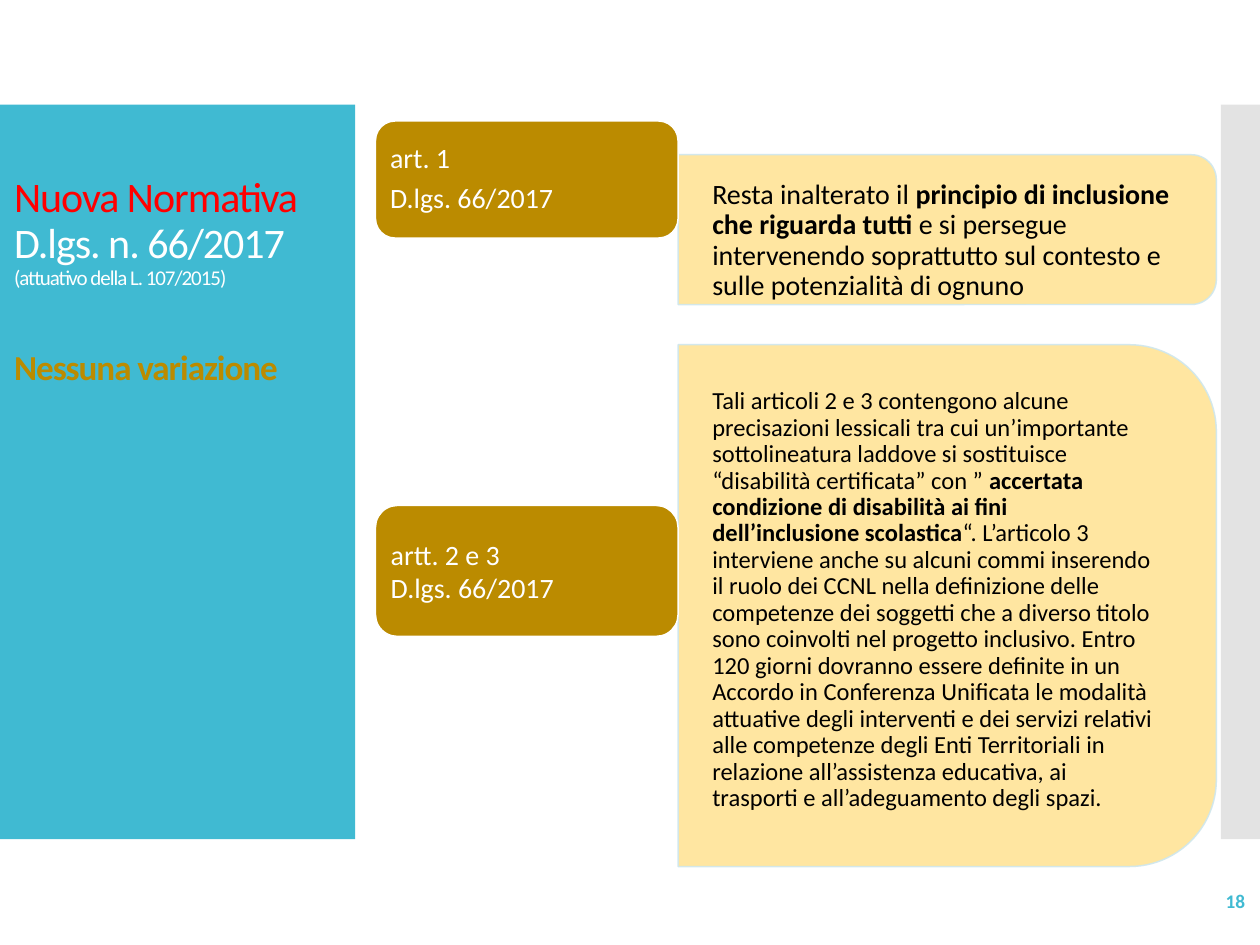
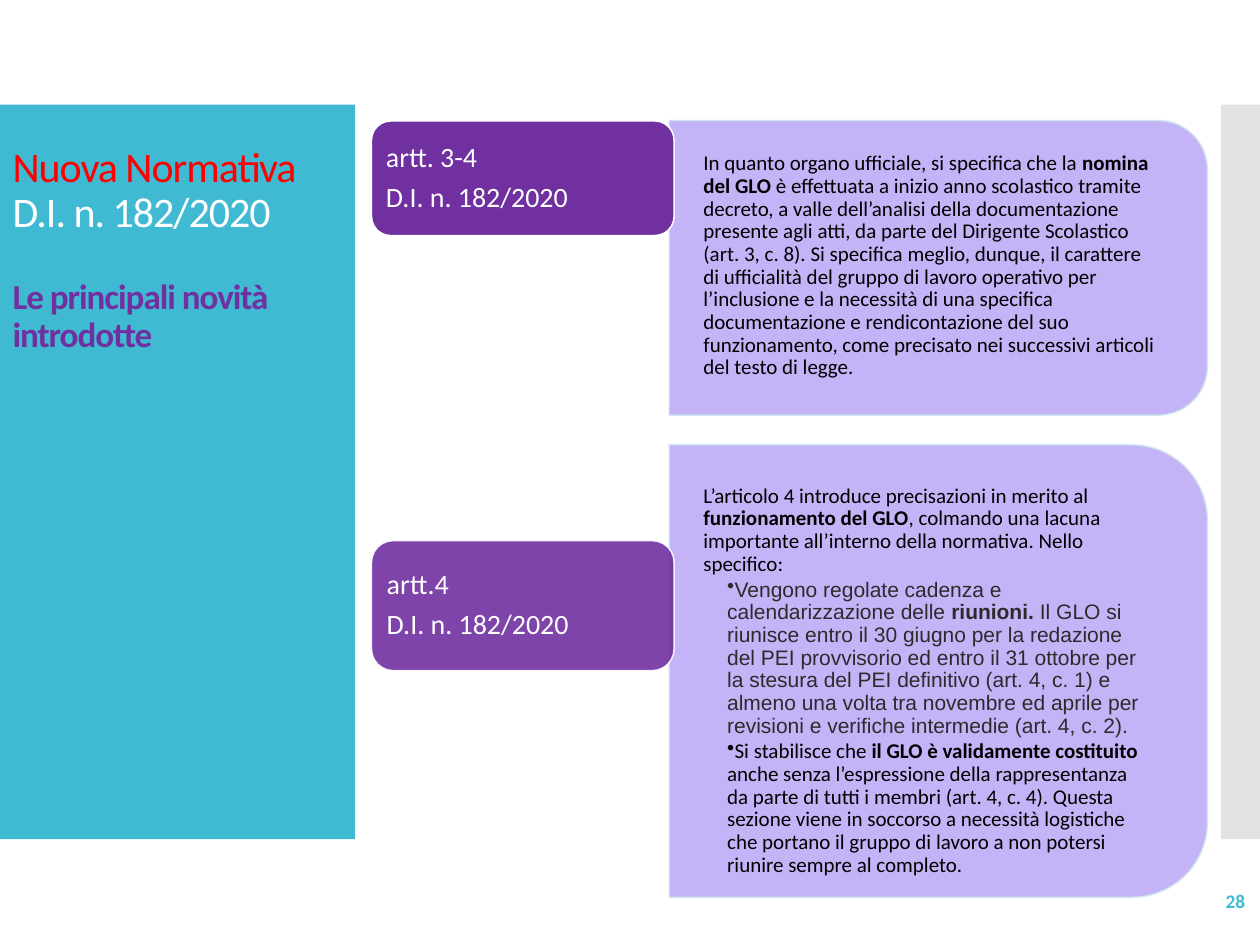
import pptx
import pptx.util
import pptx.dml.color
import pptx.enum.shapes
import pptx.enum.text
import pptx.oxml
import pptx.oxml.ns

Cm = pptx.util.Cm
Pt = pptx.util.Pt
RGB = pptx.dml.color.RGBColor
KIND = pptx.enum.shapes.MSO_SHAPE
ALIGN = pptx.enum.text.PP_ALIGN
MIDDLE = pptx.enum.text.MSO_ANCHOR.MIDDLE
qn = pptx.oxml.ns.qn

TEAL = RGB(0x40, 0xBA, 0xD2)
GREY = RGB(0xC8, 0xC8, 0xC8)
RED = RGB(0xFF, 0x00, 0x00)
WHITE = RGB(0xFF, 0xFF, 0xFF)
BLACK = RGB(0x00, 0x00, 0x00)
INK = RGB(0x2B, 0x2B, 0x2B)
GOLD = RGB(0xBB, 0x8B, 0x00)
CREAM = RGB(0xFF, 0xE4, 0x97)
PLUM = RGB(0x70, 0x30, 0xA0)
LILAC = RGB(0xBF, 0xAB, 0xF7)
ICE = RGB(0xCF, 0xE7, 0xEE)

WIDE = 10.85


def draw(slide, kind, box, fill, edge=None, alpha=100):
    shape = slide.shapes.add_shape(kind, *[Cm(n) for n in box])
    shape.shadow.inherit = False
    shape.fill.solid()
    shape.fill.fore_color.rgb = fill
    if edge is None:
        shape.line.fill.background()
    else:
        shape.line.color.rgb = edge
        shape.line.width = Pt(0.85)
    if alpha < 100:
        for color in list(shape.element.spPr.iter(qn("a:srgbClr"))):
            fade = pptx.oxml.parse_xml(
                f'<a:alpha {pptx.oxml.ns.nsdecls("a")} val="{alpha * 1000}"/>')
            color.append(fade)
    return shape


def write(para, text, size, color, face="Calibri", bold=False):
    for i, part in enumerate(text.split("*")):
        run = para.add_run()
        run.text = part
        run.font.name = face
        run.font.size = Pt(size)
        run.font.color.rgb = color
        run.font.bold = bold or i % 2 == 1


pages = [
    {
        "num": "18", "dark": GOLD, "pale": CREAM, "left": 7.57, "right": 13.67,
        "title": (0.03, 2.44, 6.86, 6.5), "foot": 0.13,
        "lines": [
            (0, [("Nuova Normativa", 24, RED, False)]),
            (0, [("D.lgs. n. 66/2017 ", 24, WHITE, False),
                 ("(attuativo della L. 107/2015)", 12, WHITE, False)]),
            (34.5, [("Nessuna variazione", 20, GOLD, True)]),
        ],
        "rows": [
            {
                "panel": (3.12, 3.02), "text": (3.28, 10.69, 2.72), "size": 16,
                "label": (2.44, 2.36), "alpha": 100, "lead": 0.9, "gap": 5.6,
                "names": ["art. 1", "D.lgs. 66/2017"],
                "body": [
                    "Resta inalterato il *principio di inclusione che riguarda tutti *"
                    "e si persegue intervenendo soprattutto sul contesto e sulle "
                    "potenzialità di ognuno",
                ],
            },
            {
                "panel": (6.95, 10.52), "text": (7.47, 10.31, 9.5), "size": 14,
                "label": (10.19, 2.64), "alpha": 100, "lead": 1.0, "gap": 0,
                "names": ["artt. 2 e 3", "D.lgs. 66/2017"],
                "body": [
                    "Tali articoli 2 e 3 contengono alcune precisazioni lessicali tra cui "
                    "un’importante sottolineatura laddove si sostituisce “disabilità "
                    "certificata” con ” *accertata condizione di disabilità ai fini "
                    "dell’inclusione scolastica*“. L’articolo 3 interviene anche su alcuni "
                    "commi inserendo il ruolo dei CCNL nella definizione delle competenze "
                    "dei soggetti che a diverso titolo sono coinvolti nel progetto "
                    "inclusivo. Entro 120 giorni dovranno essere definite in un Accordo in "
                    "Conferenza Unificata le modalità attuative degli interventi e dei "
                    "servizi relativi alle competenze degli Enti Territoriali in relazione "
                    "all’assistenza educativa, ai trasporti e all’adeguamento degli spazi.",
                ],
            },
        ],
    },
    {
        "num": "28", "dark": PLUM, "pale": LILAC, "left": 7.49, "right": 13.49,
        "title": (0, 1.73, 6.86, 8.41), "foot": 1.9,
        "lines": [
            (0, [("Nuova Normativa", 24, RED, False)]),
            (0, [("D.I. n. 182/2020", 24, WHITE, False)]),
            (24.5, [("Le principali novità introdotte", 20, PLUM, True)]),
        ],
        "rows": [
            {
                "panel": (2.43, 5.94), "text": (2.72, 10.54, 5.36), "size": 12,
                "label": (2.44, 2.31), "alpha": 100, "lead": 0.9, "gap": 5.6,
                "names": ["artt. 3-4", "D.I. n. 182/2020"],
                "body": [
                    "In quanto organo ufficiale, si specifica che la *nomina del GLO *è "
                    "effettuata a inizio anno scolastico tramite decreto, a valle "
                    "dell’analisi della documentazione presente agli atti, da parte del "
                    "Dirigente Scolastico (art. 3, c. 8). Si specifica meglio, dunque, il "
                    "carattere di ufficialità del gruppo di lavoro operativo per "
                    "l’inclusione e la necessità di una specifica documentazione e "
                    "rendicontazione del suo funzionamento, come precisato nei successivi "
                    "articoli del testo di legge.",
                ],
            },
            {
                "panel": (8.97, 9.12), "text": (9.42, 10.39, 8.23), "size": 12,
                "label": (10.9, 2.62), "alpha": 90, "lead": 0.9, "gap": 5.6,
                "names": ["artt.4 ", "D.I. n. 182/2020"],
                "body": [
                    "L’articolo 4 introduce precisazioni in merito al *funzionamento del "
                    "GLO*, colmando una lacuna importante all’interno della normativa. "
                    "Nello specifico:",
                    "Vengono regolate cadenza e calendarizzazione delle *riunioni. *Il GLO "
                    "si riunisce entro il 30 giugno per la redazione del PEI provvisorio ed "
                    "entro il 31 ottobre per la stesura del PEI definitivo (art. 4, c. 1) e "
                    "almeno una volta tra novembre ed aprile per revisioni e verifiche "
                    "intermedie (art. 4, c. 2).",
                    "Si stabilisce che *il GLO è validamente costituito *anche senza "
                    "l’espressione della rappresentanza da parte di tutti i membri (art. 4, "
                    "c. 4). Questa sezione viene in soccorso a necessità logistiche che "
                    "portano il gruppo di lavoro a non potersi riunire sempre al completo.",
                ],
            },
        ],
    },
]

deck = pptx.Presentation()
deck.slide_width = Cm(25.4)
deck.slide_height = Cm(19.05)

for page in pages:
    slide = deck.slides.add_slide(deck.slide_layouts[5])
    draw(slide, KIND.RECTANGLE, (0, 2.11, 7.16, 14.81), TEAL)
    draw(slide, KIND.RECTANGLE, (24.61, 2.11, 0.79, 14.81), GREY, alpha=50)

    title = slide.shapes.title
    title.left, title.top, title.width, title.height = [Cm(n) for n in page["title"]]
    slide.shapes._spTree.append(title.element)
    frame = title.text_frame
    frame.auto_size = pptx.enum.text.MSO_AUTO_SIZE.NONE
    frame.vertical_anchor = MIDDLE
    frame.margin_bottom = Cm(page["foot"])
    for i, (gap, parts) in enumerate(page["lines"]):
        para = frame.add_paragraph() if i else frame.paragraphs[0]
        para.alignment = ALIGN.LEFT
        para.line_spacing = 0.9
        para.space_before = Pt(gap)
        for text, size, color, bold in parts:
            write(para, text, size, color, bold=bold)
        for run in para.runs:
            run.font._element.set("spc", "-60")

    for row in page["rows"]:
        top, high = row["panel"]
        turn = (WIDE - high) / 2
        panel = draw(slide, KIND.ROUND_2_SAME_RECTANGLE,
                     (page["right"] + turn, top - turn, high, WIDE),
                     page["pale"], ICE, 90)
        panel.rotation = 90

        top, wide, high = row["text"]
        box = slide.shapes.add_textbox(Cm(page["right"]), Cm(top), Cm(wide), Cm(high))
        frame = box.text_frame
        frame.word_wrap = True
        frame.margin_left = frame.margin_right = Cm(0.69)
        frame.margin_top = frame.margin_bottom = Cm(0.36)
        for i, text in enumerate(row["body"]):
            para = frame.add_paragraph() if i else frame.paragraphs[0]
            if i:
                props = para._p.get_or_add_pPr()
                props.set("marL", str(Cm(0.48)))
                props.set("indent", "0")
                props.append(pptx.oxml.parse_xml(
                    f'<a:buChar {pptx.oxml.ns.nsdecls("a")} char="•"/>'))
            para.line_spacing = 0.9
            para.space_after = Pt(row["size"] * 0.15)
            color, face = (INK, "Arial") if i == 1 else (BLACK, "Calibri")
            write(para, text, row["size"], color, face)

        top, high = row["label"]
        label = draw(slide, KIND.ROUNDED_RECTANGLE, (page["left"], top, 6.1, high),
                     page["dark"], WHITE, row["alpha"])
        frame = label.text_frame
        frame.vertical_anchor = MIDDLE
        frame.margin_left = frame.margin_right = Cm(0.18)
        frame.margin_top = frame.margin_bottom = Cm(0.08)
        for i, text in enumerate(row["names"]):
            para = frame.add_paragraph() if i else frame.paragraphs[0]
            para.alignment = ALIGN.LEFT
            para.line_spacing = row["lead"]
            para.space_after = Pt(row["gap"])
            write(para, text, 16, WHITE)

    box = slide.shapes.add_textbox(Cm(22.15), Cm(17.65), Cm(3.2), Cm(1.02))
    frame = box.text_frame
    frame.word_wrap = True
    frame.vertical_anchor = MIDDLE
    para = frame.paragraphs[0]
    para.alignment = ALIGN.RIGHT
    write(para, page["num"], 11, TEAL, bold=True)

deck.save("out.pptx")
